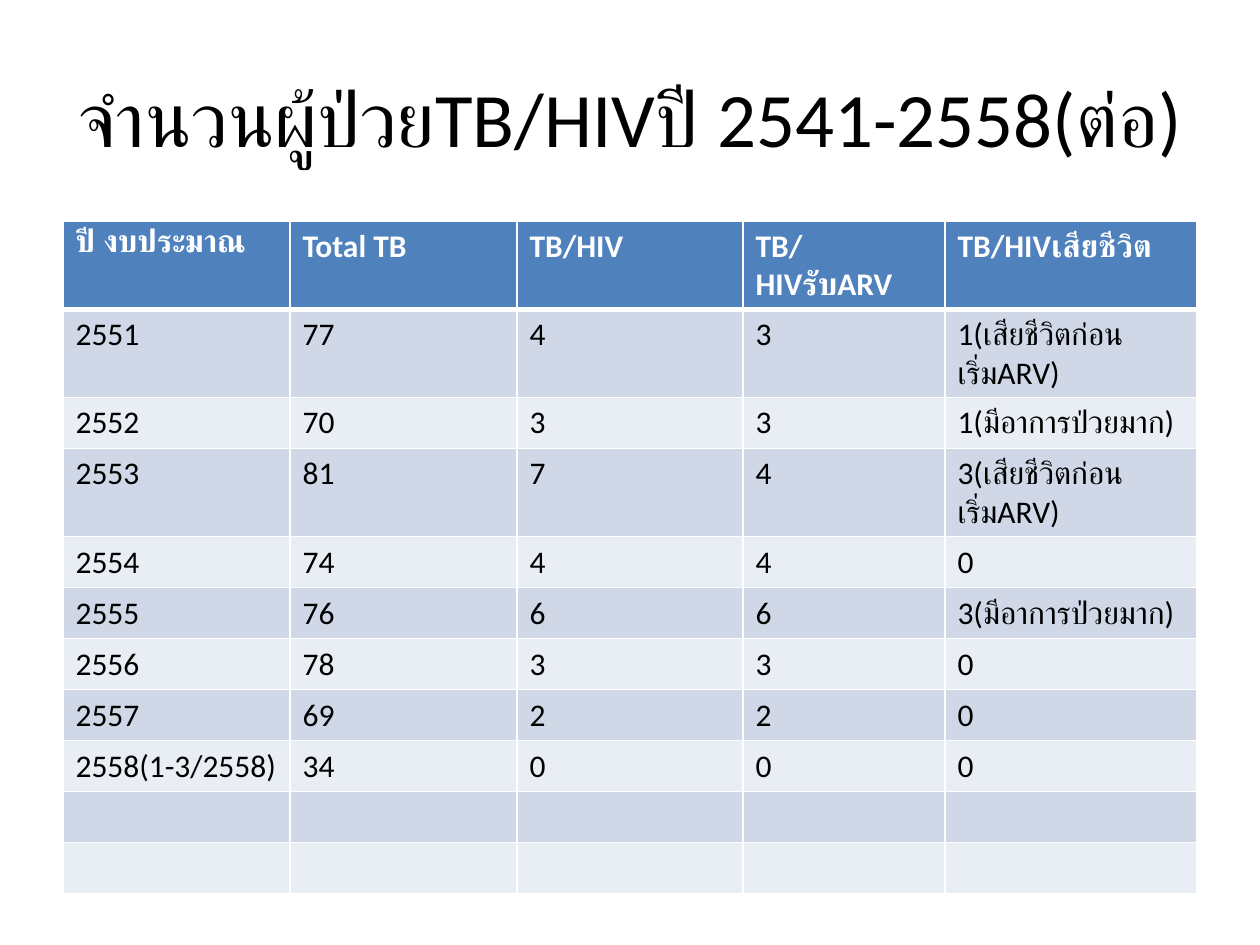
from lxml.etree import SubElement
from pptx import Presentation
from pptx.dml.color import RGBColor
from pptx.enum.text import MSO_ANCHOR, PP_ALIGN
from pptx.oxml.ns import qn
from pptx.util import Emu, Pt

SCALE = 914400 / 126


def px(length):
    return Emu(round(length * SCALE))


def style(span, size, color, bold=False):
    span.font.name = "Calibri"
    span.font.size = Pt(size)
    span.font.bold = bold
    span.font.color.rgb = RGBColor.from_string(color)


deck = Presentation()
deck.slide_width, deck.slide_height = px(1260), px(945)
page = deck.slides.add_slide(deck.slide_layouts[6])

# Title
title = page.shapes.add_textbox(px(63), px(38), px(1134), px(157))
title.text_frame.word_wrap = True
title.text_frame.vertical_anchor = MSO_ANCHOR.MIDDLE
para = title.text_frame.paragraphs[0]
para.text = "จำนวนผู้ป่วยTB/HIVปี 2541-2558(ต่อ)"
para.alignment = PP_ALIGN.CENTER
style(para.runs[0], 44, "000000")

# Table content: a header, eight years and two empty rows
rows = [
    ["ปี งบประมาณ", "Total TB", "TB/HIV", "TB/HIVรับARV", "TB/HIVเสียชีวิต"],
    ["2551", "77", "4", "3", "1(เสียชีวิตก่อนเริ่มARV)"],
    ["2552", "70", "3", "3", "1(มีอาการป่วยมาก)"],
    ["2553", "81", "7", "4", "3(เสียชีวิตก่อนเริ่มARV)"],
    ["2554", "74", "4", "4", "0"],
    ["2555", "76", "6", "6", "3(มีอาการป่วยมาก)"],
    ["2556", "78", "3", "3", "0"],
    ["2557", "69", "2", "2", "0"],
    ["2558(1-3/2558)", "34", "0", "0", "0"],
    [""] * 5,
    [""] * 5,
]
widths = [227, 227, 226, 202, 252]
row_height = 51

table = page.shapes.add_table(
    len(rows), len(widths), px(63), px(221), px(sum(widths)), px(row_height * len(rows))
).table
for column, width in zip(table.columns, widths):
    column.width = px(width)

for row_index, texts in enumerate(rows):
    table.rows[row_index].height = px(row_height)
    is_header = row_index == 0
    if is_header:
        fill_color, text_color = "4F81BD", "FFFFFF"
    else:
        fill_color, text_color = ("E9EDF4", "D0D8E8")[row_index % 2], "000000"

    for column_index, text in enumerate(texts):
        cell = table.cell(row_index, column_index)

        # White borders, thicker below the header
        properties = cell._tc.get_or_add_tcPr()
        for side in ("lnL", "lnR", "lnT", "lnB"):
            thick = (row_index, side) in ((0, "lnB"), (1, "lnT"))
            line = SubElement(properties, qn(f"a:{side}"), w=str(Pt(3 if thick else 1)))
            line_fill = SubElement(line, qn("a:solidFill"))
            SubElement(line_fill, qn("a:srgbClr"), val="FFFFFF")

        cell.fill.solid()
        cell.fill.fore_color.rgb = RGBColor.from_string(fill_color)
        if text:
            cell.text_frame.text = text
            style(cell.text_frame.paragraphs[0].runs[0], 18, text_color, is_header)

deck.save("out.pptx")
